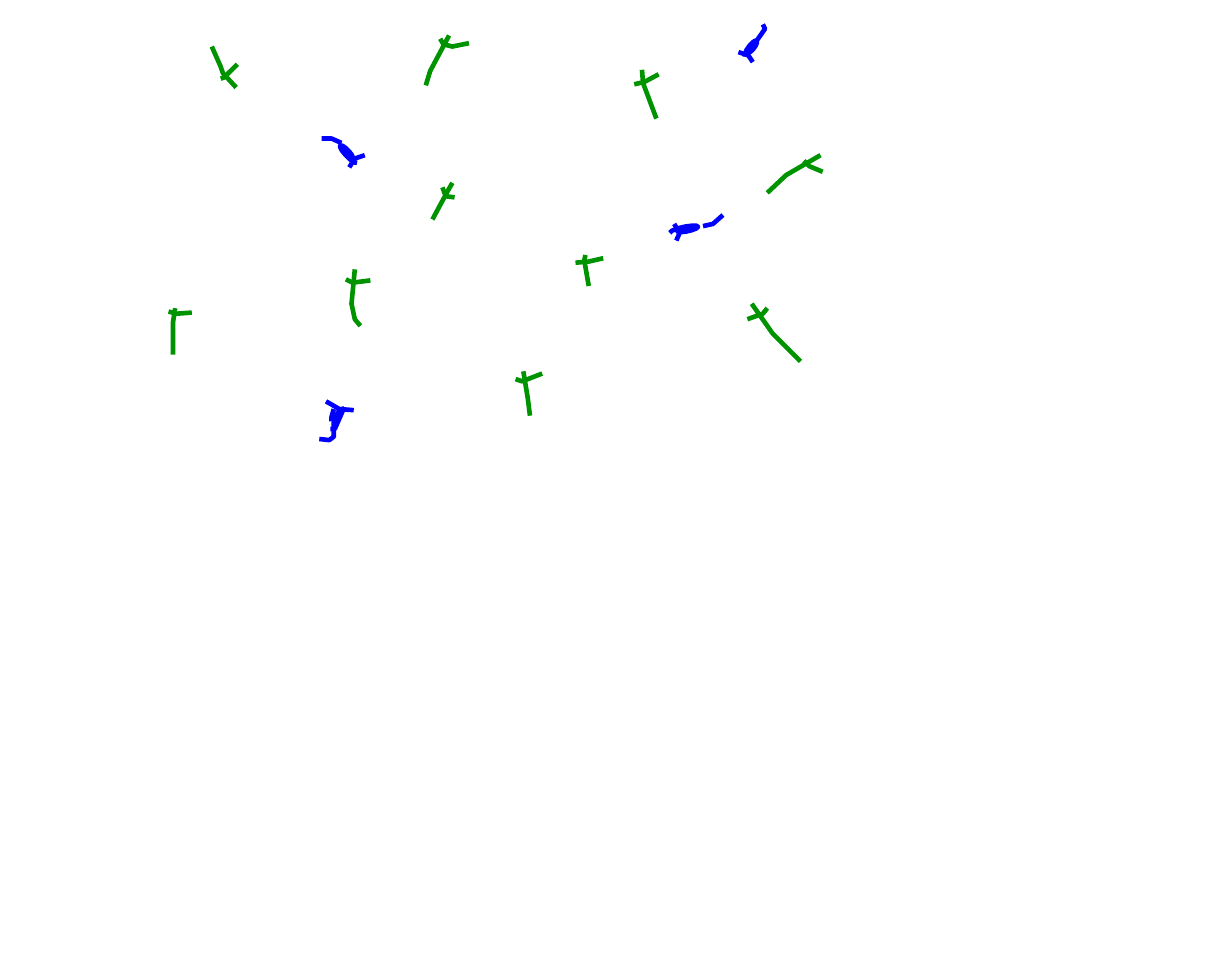
from math import atan2, cos, hypot, pi, sin

from pptx import Presentation
from pptx.dml.color import RGBColor as Rgb
from pptx.util import Pt

COLOURS = {"green": "009300", "blue": "0000FF", "paper": "FFFFFF"}
GRID = 0.72  # points per coordinate unit
LINE_WIDTH = 3
TURNS, STEPS = 2, 12  # scribble loops and points per loop

# Green marks: a long stem, then a short crossbar
GREEN_MARKS = [
    ([(191, 42), (199, 60), (201, 66), (213, 79)], [(199, 71), (202, 70), (214, 58)]),
    ([(405, 32), (388, 64), (384, 77)], [(397, 35), (400, 40), (408, 42), (423, 39)]),
    ([(579, 63), (580, 75), (592, 107)], [(572, 76), (581, 74), (594, 67)]),
    ([(740, 140), (709, 158), (692, 174)], [(725, 145), (730, 150), (742, 155)]),
    ([(528, 230), (527, 235), (531, 258)], [(519, 237), (531, 236), (544, 233)]),
    ([(320, 243), (317, 274), (320, 288), (325, 294)], [(312, 252), (318, 255), (334, 253)]),
    ([(158, 278), (156, 291), (156, 320)], [(152, 281), (159, 283), (173, 282)]),
    ([(472, 335), (476, 359), (478, 375)], [(465, 342), (471, 344), (489, 337)]),
    ([(678, 274), (697, 301), (722, 326)], [(692, 278), (688, 283), (674, 288)]),
    ([(408, 165), (404, 172), (390, 198)], [(399, 169), (402, 177), (410, 178)]),
]

# Blue marks: both ends and half width of the scribbled body, then loose strokes
BLUE_MARKS = [
    ((684, 35), (672, 51), 3,
     [[(683, 36), (690, 26), (688, 22)], [(666, 47), (675, 50), (679, 56)]]),
    ((305, 129), (322, 147), 3,
     [[(315, 151), (320, 143), (329, 140)], [(308, 129), (299, 125), (290, 125)]]),
    ((633, 204), (604, 210), 3,
     [[(608, 202), (613, 210), (610, 217)], [(634, 204), (643, 202), (652, 194)]]),
    ((307, 369), (303, 383), 2,
     [[(301, 369), (299, 376), (299, 380)],
      [(298, 387), (302, 387), (309, 371), (308, 367)],
      [(303, 378), (301, 381), (301, 388)],
      [(301, 388), (301, 394), (297, 397), (288, 396)],
      [(294, 362), (306, 369), (319, 370)]]),
]


def scribble(start, end, half_width):
    """Points of a narrow spiral between two ends."""
    centre_x, centre_y = (start[0] + end[0]) / 2, (start[1] + end[1]) / 2
    across, down = end[0] - start[0], end[1] - start[1]
    half_length, angle = hypot(across, down) / 2, atan2(down, across)
    points = []
    for step in range(TURNS * STEPS + 1):
        turn = 2 * pi * step / STEPS
        shrink = 1 - step / (TURNS * STEPS + 1)
        along = half_length * shrink * cos(turn)
        aside = half_width * shrink * sin(turn)
        points.append((centre_x + along * cos(angle) - aside * sin(angle),
                       centre_y + along * sin(angle) + aside * cos(angle)))
    return points


class Sketch:
    """Holds the line style and the slide being drawn on."""

    def __init__(self, slide):
        self.slide = slide
        self.line_width = Pt(LINE_WIDTH)

    def background(self, colour):
        fill = self.slide.background.fill
        fill.solid()
        fill.fore_color.rgb = Rgb.from_string(COLOURS[colour])

    def stroke(self, group, points, colour):
        # Whole points of a finer grid keep the small curves smooth
        fine = [(round(x * 10), round(y * 10)) for x, y in points]
        builder = group.shapes.build_freeform(*fine[0], scale=Pt(GRID) / 10)
        builder.add_line_segments(fine[1:], close=False)
        shape = builder.convert_to_shape()
        shape.shadow.inherit = False
        shape.fill.background()
        shape.line.color.rgb = Rgb.from_string(COLOURS[colour])
        shape.line.width = self.line_width

    def mark(self, strokes, colour):
        group = self.slide.shapes.add_group_shape()
        for points in strokes:
            self.stroke(group, points, colour)


def main():
    presentation = Presentation()
    presentation.slide_width = Pt(800)
    presentation.slide_height = Pt(630)
    blank_layout = presentation.slide_layouts[6]
    sketch = Sketch(presentation.slides.add_slide(blank_layout))
    sketch.background("paper")

    # Green marks
    for strokes in GREEN_MARKS:
        sketch.mark(strokes, "green")

    # Blue marks
    for start, end, half_width, strokes in BLUE_MARKS:
        sketch.mark([scribble(start, end, half_width), *strokes], "blue")

    presentation.save("out.pptx")


if __name__ == "__main__":
    main()
